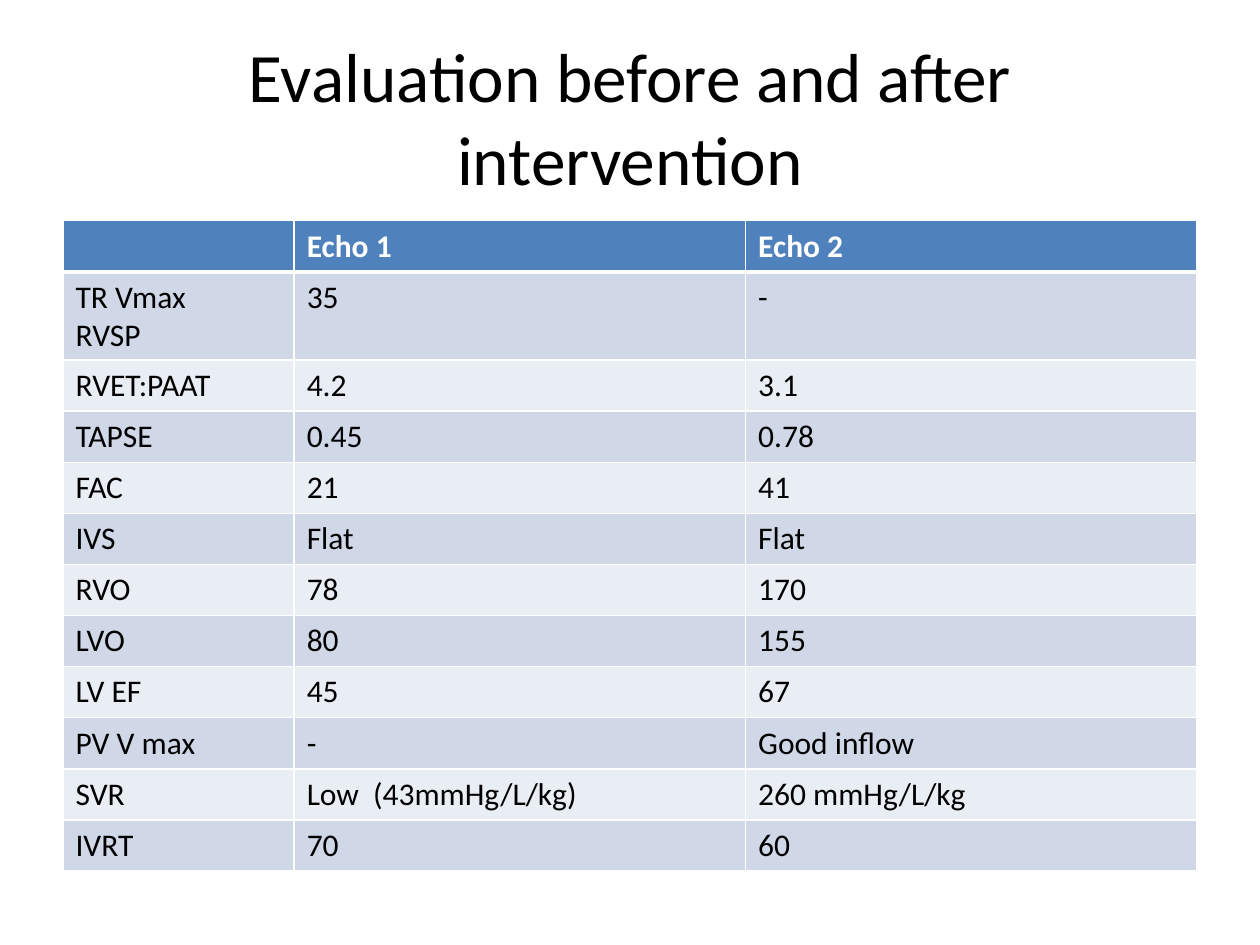
import pptx
import pptx.dml.color
import pptx.enum.text
import pptx.oxml
import pptx.oxml.ns
import pptx.util
from pptx.util import Cm

COLORS = {
    "header": "4F81BD",
    "odd_row": "D0D8E8",
    "even_row": "E9EDF4",
    "border": "FFFFFF",
    "header_text": "FFFFFF",
    "text": "000000",
}

MEASUREMENTS = [
    ("", "Echo 1", "Echo 2"),
    ("TR Vmax\nRVSP", "35", "-"),
    ("RVET:PAAT", "4.2", "3.1"),
    ("TAPSE", "0.45", "0.78"),
    ("FAC", "21", "41"),
    ("IVS", "Flat", "Flat"),
    ("RVO", "78", "170"),
    ("LVO", "80", "155"),
    ("LV EF", "45", "67"),
    ("PV V max", "-", "Good inflow"),
    ("SVR", "Low  (43mmHg/L/kg)", "260 mmHg/L/kg"),
    ("IVRT", "70", "60"),
]


class SlideBuilder:
    font = "Calibri"
    title_size = 39.6
    table_size = 18

    def __init__(self, slide):
        self.slide = slide

    def color(self, name):
        return pptx.dml.color.RGBColor.from_string(COLORS[name])

    def add_lines(self, frame, text, size, color, bold=False, align=None):
        for index, line in enumerate(text.split("\n")):
            paragraph = frame.paragraphs[0] if index == 0 else frame.add_paragraph()
            paragraph.alignment = align
            if not line:
                continue
            run = paragraph.add_run()
            run.text = line
            run.font.name = self.font
            run.font.size = pptx.util.Pt(size)
            run.font.bold = bold
            run.font.color.rgb = self.color(color)

    def title(self, text, left, top, width, height):
        frame = self.slide.shapes.add_textbox(left, top, width, height).text_frame
        frame.word_wrap = True
        frame.vertical_anchor = pptx.enum.text.MSO_ANCHOR.MIDDLE
        self.add_lines(frame, text, self.title_size, "text",
                       align=pptx.enum.text.PP_ALIGN.CENTER)

    def borders(self, cell, widths):
        # Border lines must come before the fill in the cell properties
        properties = cell._tc.get_or_add_tcPr()
        for position, (side, points) in enumerate(widths.items()):
            line = pptx.oxml.parse_xml(
                f'<a:ln{side} {pptx.oxml.ns.nsdecls("a")} w="{pptx.util.Pt(points)}">'
                f'<a:solidFill><a:srgbClr val="{COLORS["border"]}"/></a:solidFill>'
                f'</a:ln{side}>')
            properties.insert(position, line)

    def table(self, rows, left, top, column_widths, row_height):
        table = self.slide.shapes.add_table(
            len(rows), len(column_widths), left, top,
            sum(column_widths), row_height * len(rows)).table
        for column, width in zip(table.columns, column_widths):
            column.width = width
        for r, values in enumerate(rows):
            table.rows[r].height = row_height
            is_header = r == 0
            band = "header" if is_header else "odd_row" if r % 2 else "even_row"
            for c, value in enumerate(values):
                cell = table.cell(r, c)
                cell.fill.solid()
                cell.fill.fore_color.rgb = self.color(band)
                self.borders(cell, {"L": 1, "R": 1, "T": 3 if r == 1 else 1,
                                    "B": 3 if is_header else 1})
                self.add_lines(cell.text_frame, value, self.table_size,
                               "header_text" if is_header else "text", bold=is_header)


def main():
    presentation = pptx.Presentation()
    presentation.slide_width = Cm(25.4)
    presentation.slide_height = Cm(19.05)
    builder = SlideBuilder(presentation.slides.add_slide(presentation.slide_layouts[6]))

    # Title
    builder.title("Evaluation before and after intervention",
                  Cm(1.27), Cm(0.76), Cm(22.86), Cm(3.18))

    # Echo measurements before and after
    builder.table(MEASUREMENTS, Cm(1.27), Cm(4.45),
                  [Cm(4.66), Cm(9.1), Cm(9.1)], Cm(1.03))

    presentation.save("out.pptx")


if __name__ == "__main__":
    main()
